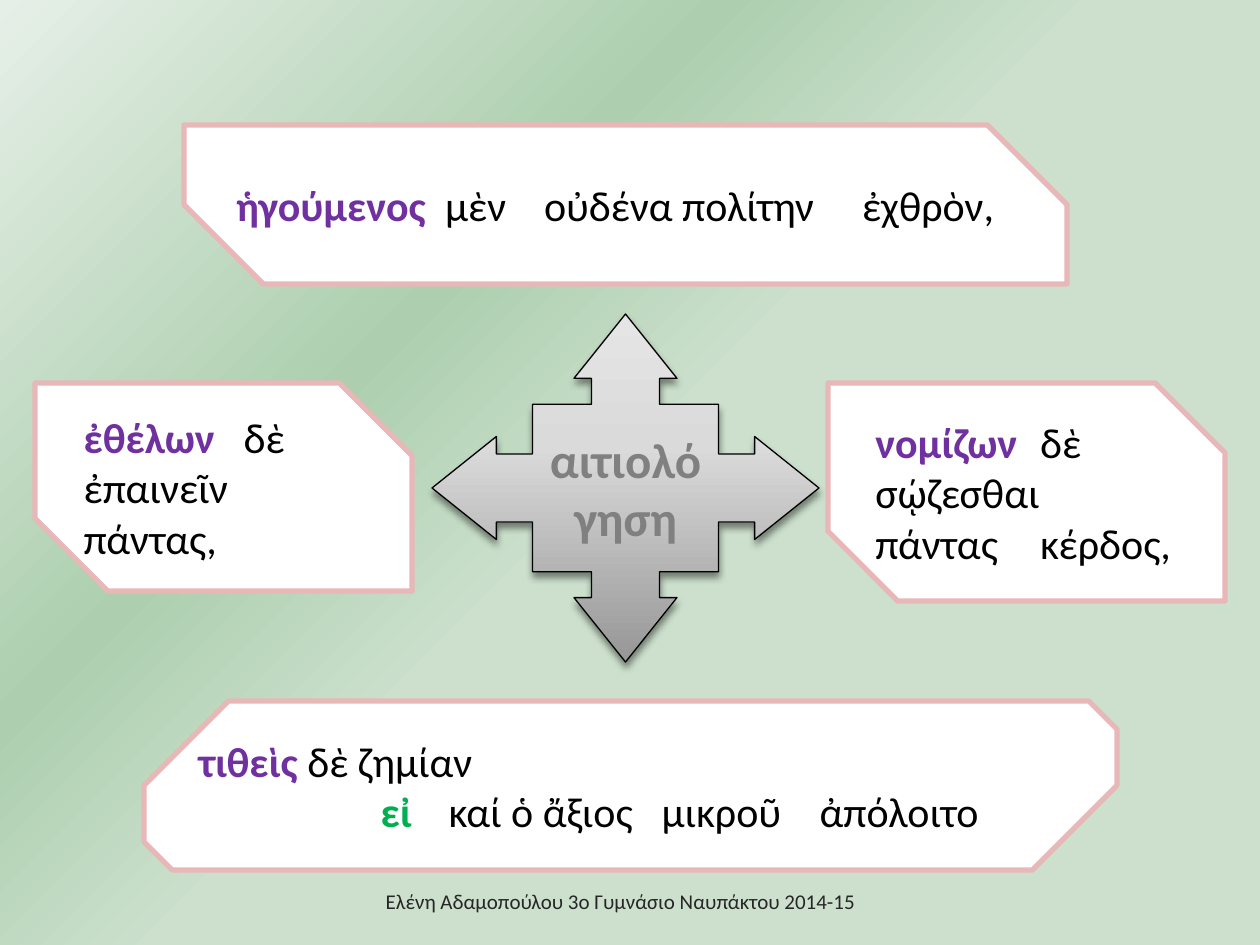
from dataclasses import dataclass

from lxml import etree
from pptx import Presentation
from pptx import util as u
from pptx.dml import color
from pptx.enum import shapes, text
from pptx.oxml import ns

SCALE = 914400 / 126
HUES = {
    "ink": "000000", "verb": "7030A0", "cond": "00B050", "hub": "808080",
    "note": "262626", "card": "FFFFFF", "edge": "E8B7B7",
}
GLOW = [(50, "CCE0CD"), (67, "ADCFAF"), (100, "E6EFE7")]
STEEL = [(0, "979797"), (62, "DADADA"), (100, "E5E5E5")]
RADIAL = '<a:path path="circle"><a:fillToRect l="100000" t="100000"/></a:path>'
UPWARD = '<a:lin ang="16200000" scaled="0"/>'
SHADE = (
    '<a:outerShdw {ns} blurRad="50800" dist="38100" dir="5400000" rotWithShape="0">'
    '<a:srgbClr val="000000"><a:alpha val="43000"/></a:srgbClr></a:outerShdw>'
)


@dataclass(frozen=True)
class Run:
    words: str
    hue: str = "ink"
    bold: bool = False
    size: int = 24


@dataclass(frozen=True)
class Para:
    lines: list[list[Run]]
    tabs: tuple[int, ...] = ()


@dataclass(frozen=True)
class Card:
    box: tuple[int, int, int, int]
    snips: tuple[float, float]
    paras: list[Para]


def px(num: int) -> int:
    return round(num * SCALE)


def rgb(name: str) -> color.RGBColor:
    return color.RGBColor.from_string(HUES[name])


def node(xml: str):
    return etree.fromstring(xml.replace("{ns}", ns.nsdecls("a")))


def blend(fill, owner, stops: list[tuple[int, str]], way: str) -> None:
    fill.solid()
    marks = "".join(
        f'<a:gs pos="{pos * 1000}"><a:srgbClr val="{hue}"/></a:gs>' for pos, hue in stops
    )
    old = owner.find(".//" + ns.qn("a:solidFill"))
    new = node(f'<a:gradFill {{ns}} rotWithShape="1"><a:gsLst>{marks}</a:gsLst>{way}</a:gradFill>')
    old.getparent().replace(old, new)


def write(frame, paras: list[Para], align) -> None:
    frame.word_wrap = True
    frame.vertical_anchor = text.MSO_ANCHOR.MIDDLE
    for num, para in enumerate(paras):
        par = frame.add_paragraph() if num else frame.paragraphs[0]
        par.alignment = align
        if para.tabs:
            stops = "".join(f'<a:tab pos="{px(tab)}" algn="l"/>' for tab in para.tabs)
            par._p.get_or_add_pPr().append(node(f"<a:tabLst {{ns}}>{stops}</a:tabLst>"))
        for row, line in enumerate(para.lines):
            if row:
                par.add_line_break()
            for item in line:
                run = par.add_run()
                run.text = item.words
                style = {"name": "Calibri", "size": u.Pt(item.size), "bold": item.bold}
                for key, val in style.items():
                    setattr(run.font, key, val)
                run.font.color.rgb = rgb(item.hue)


def shape(slide, kind, box: tuple[int, ...], adj: tuple[float, ...], hue: str, width: float):
    form = slide.shapes.add_shape(kind, *map(px, box))
    form.shadow.inherit = False
    for num, val in enumerate(adj):
        form.adjustments[num] = val
    form.line.color.rgb = rgb(hue)
    form.line.width = u.Pt(width)
    return form


def draw_card(slide, card: Card) -> None:
    kind = shapes.MSO_SHAPE.SNIP_2_DIAG_RECTANGLE
    form = shape(slide, kind, card.box, card.snips, "edge", 3)
    form.fill.solid()
    form.fill.fore_color.rgb = rgb("card")
    write(form.text_frame, card.paras, text.PP_ALIGN.LEFT)


def draw_hub(slide) -> None:
    kind = shapes.MSO_SHAPE.QUAD_ARROW_CALLOUT
    hub = shape(slide, kind, (432, 314, 387, 348), (0.196, 0.148, 0.185, 0.481), "ink", 0.75)
    props = hub._element.spPr
    blend(hub.fill, props, STEEL, UPWARD)
    props.find(ns.qn("a:effectLst")).append(node(SHADE))
    write(hub.text_frame, [Para([[Run("αιτιολόγηση", "hub", True, 28)]])], text.PP_ALIGN.CENTER)


def draw_note(slide) -> None:
    note = slide.shapes.add_textbox(*map(px, (353, 876, 535, 50)))
    words = "Ελένη Αδαμοπούλου 3ο Γυμνάσιο Ναυπάκτου 2014-15"
    write(note.text_frame, [Para([[Run(words, "note", size=12)]])], text.PP_ALIGN.CENTER)


def verb(words: str) -> Run:
    return Run(words, "verb", True)


CARDS = [
    Card((184, 125, 883, 159), (0, 0.5), [
        Para([[verb("ἡγούμενος"), Run("\tμὲν\tοὐδένα πολίτην\tἐχθρὸν,")]], (209, 308, 626)),
    ]),
    Card((35, 383, 377, 208), (0, 0.349), [
        Para([[verb("ἐθέλων"), Run("\tδὲ")], [Run("ἐπαινεῖν")], [Run("πάντας,")]], (160,)),
    ]),
    Card((828, 383, 397, 218), (0, 0.32), [
        Para([[verb("νομίζων"), Run("\tδὲ")], [Run("σῴζεσθαι")], [Run("πάντας\tκέρδος,")]], (165,)),
    ]),
    Card((144, 701, 973, 169), (0.5, 0.167), [
        Para([[verb("τιθεὶς "), Run("δὲ ζημίαν")]]),
        Para([[Run("\tεἰ", "cond", True), Run("\tκαί ὁ ἄξιος\tμικροῦ\tἀπόλοιτο")]],
             (182, 250, 463, 621)),
    ]),
]


def main() -> None:
    deck = Presentation()
    deck.slide_width, deck.slide_height = px(1260), px(945)
    slide = deck.slides.add_slide(deck.slide_layouts[6])
    blend(slide.background.fill, slide._element, GLOW, RADIAL)
    draw_note(slide)
    draw_hub(slide)
    for card in CARDS:
        draw_card(slide, card)
    deck.save("out.pptx")


if __name__ == "__main__":
    main()
